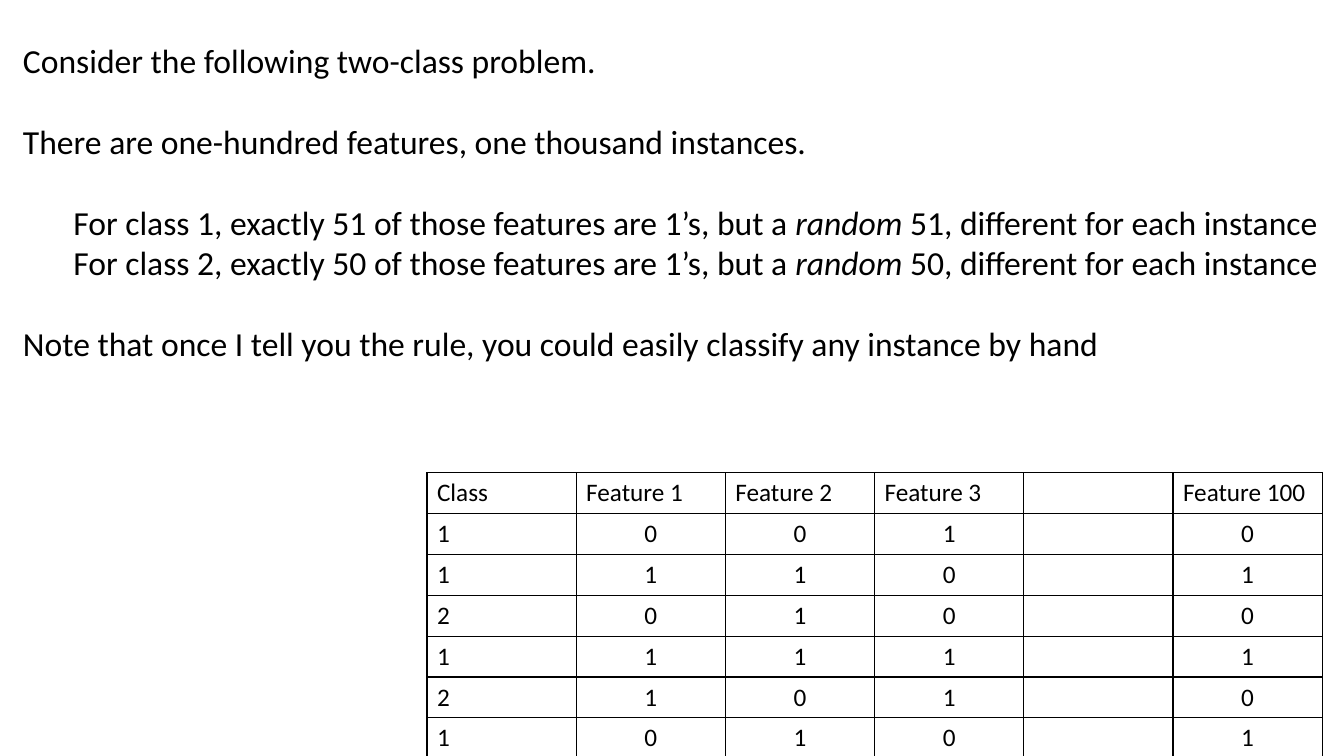
"""Build a slide that states a two-class problem with a sample table."""
from lxml.etree import SubElement
from pptx import Presentation
from pptx.dml.color import RGBColor
from pptx.enum.text import PP_ALIGN
from pptx.oxml.ns import qn
from pptx.util import Cm, Pt

BLACK = RGBColor(0, 0, 0)
WHITE = RGBColor(255, 255, 255)
FONT = "Calibri"
LINE_GAP = 28.8

# (indent level, gap above in points, [(text, italic), ...])
STATEMENTS = [
    (0, 0, [("Consider the following two-class problem.", False)]),
    (0, LINE_GAP, [("There are one-hundred features, one thousand instances.", False)]),
    (1, LINE_GAP, [("For class 1, exactly 51 of those features are 1’s, but a ", False),
                   ("random", True), (" 51, different for each instance", False)]),
    (1, 0, [("For class 2, exactly 50 of those features are 1’s, but a ", False),
            ("random", True), (" 50, different for each instance", False)]),
    (0, LINE_GAP, [("Note that once I tell you the rule, you could easily classify "
                    "any instance by hand", False)]),
]
INSTANCES = [
    ("Class", "Feature 1", "Feature 2", "Feature 3", "", "Feature 100"),
    ("1", "0", "0", "1", "", "0"),
    ("1", "1", "1", "0", "", "1"),
    ("2", "0", "1", "0", "", "0"),
    ("1", "1", "1", "1", "", "1"),
    ("2", "1", "0", "1", "", "0"),
    ("1", "0", "1", "0", "", "1"),
]
COLUMN_WIDTH = Cm(3.76)
ROW_HEIGHT = Cm(1.03)


def add_span(para, text, size, italic=False):
    """Add one run of black text."""
    span = para.add_run()
    span.text = text
    span.font.name = FONT
    span.font.size = Pt(size)
    span.font.italic = italic
    span.font.color.rgb = BLACK


def add_borders(cell):
    """Give a cell thin black lines on its four sides."""
    properties = cell._tc.get_or_add_tcPr()
    for side in ("a:lnL", "a:lnR", "a:lnT", "a:lnB"):
        line = SubElement(properties, qn(side), w=str(Pt(1)))
        fill = SubElement(line, qn("a:solidFill"))
        SubElement(fill, qn("a:srgbClr"), val=str(BLACK))


def add_statements(page):
    """Add the problem text."""
    box = page.shapes.add_textbox(Cm(0.33), Cm(0.89), Cm(33.2), Cm(9.25))
    frame = box.text_frame
    frame.word_wrap = True
    for index, (level, gap, spans) in enumerate(STATEMENTS):
        para = frame.add_paragraph() if index else frame.paragraphs[0]
        para.level = level
        para._p.get_or_add_pPr().set("marL", str(level * Cm(1.27)))
        para.space_before = Pt(gap)
        for text, italic in spans:
            add_span(para, text, 24, italic)


def add_instances(page):
    """Add the table of sample instances."""
    rows, columns = len(INSTANCES), len(INSTANCES[0])
    table = page.shapes.add_table(rows, columns, Cm(10.76), Cm(11.91),
                                  COLUMN_WIDTH * columns, ROW_HEIGHT * rows).table
    table.first_row = False
    table.horz_banding = False
    for row_index, values in enumerate(INSTANCES):
        table.rows[row_index].height = ROW_HEIGHT
        for column_index, value in enumerate(values):
            cell = table.cell(row_index, column_index)
            add_borders(cell)
            cell.fill.solid()
            cell.fill.fore_color.rgb = WHITE
            para = cell.text_frame.paragraphs[0]
            if row_index and column_index:
                para.alignment = PP_ALIGN.CENTER
            if value:
                add_span(para, value, 18)


def main():
    """Create and save the deck."""
    deck = Presentation()
    deck.slide_width, deck.slide_height = Cm(33.87), Cm(19.05)
    page = deck.slides.add_slide(deck.slide_layouts[6])
    add_instances(page)
    add_statements(page)
    deck.save("out.pptx")


if __name__ == "__main__":
    main()
